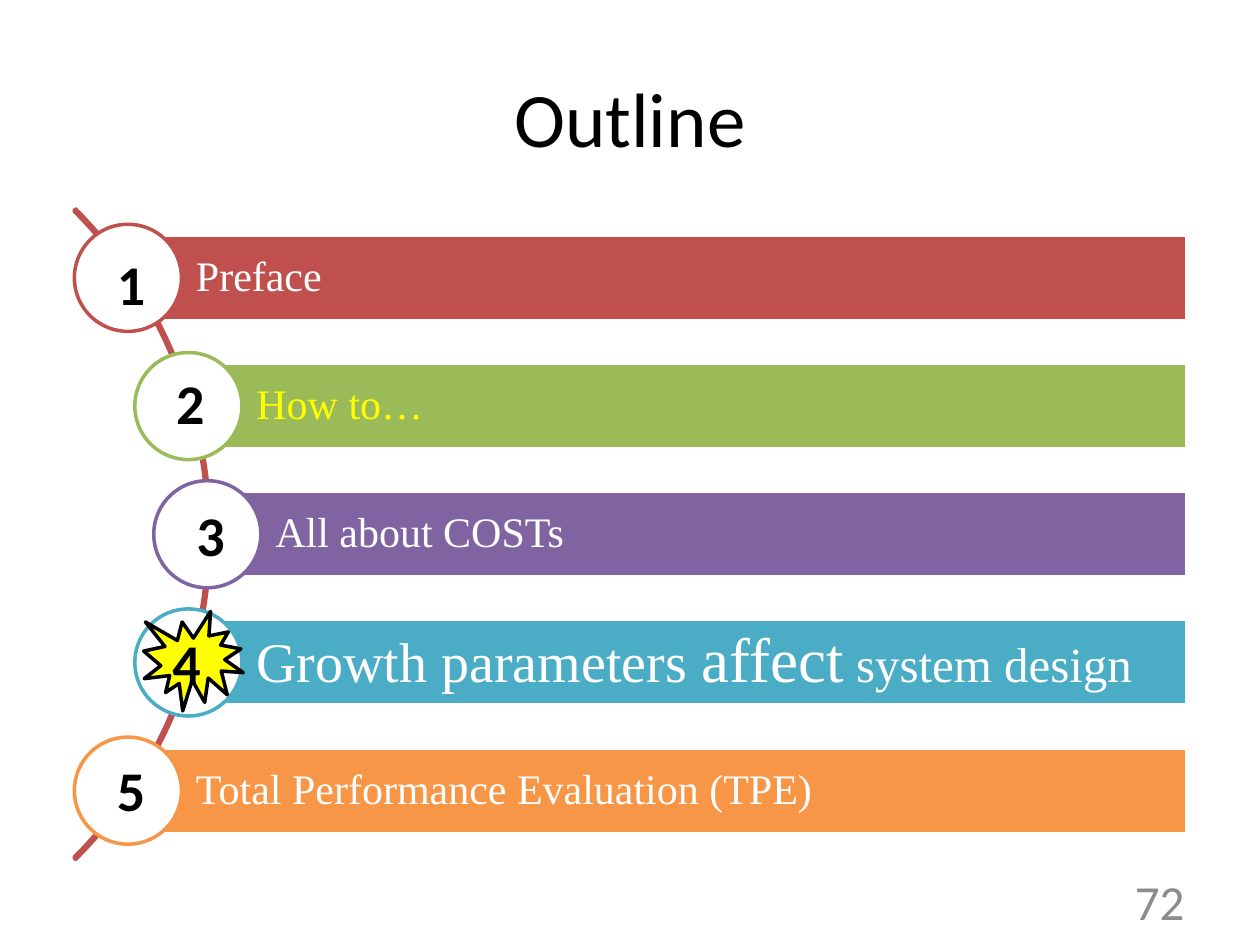
import pptx
import pptx.util
import pptx.dml.color
import pptx.enum.shapes
import pptx.enum.text

Inches = pptx.util.Inches
Pt = pptx.util.Pt
RGBColor = pptx.dml.color.RGBColor
Shape = pptx.enum.shapes.MSO_SHAPE
Align = pptx.enum.text.PP_ALIGN
Anchor = pptx.enum.text.MSO_ANCHOR
Fit = pptx.enum.text.MSO_AUTO_SIZE

WHITE = RGBColor(0xFF, 0xFF, 0xFF)
BLACK = RGBColor(0, 0, 0)
GRAY = RGBColor(0x8C, 0x8C, 0x8C)
YELLOW = RGBColor(0xFF, 0xFF, 0)
RED = RGBColor(0xC0, 0x50, 0x4D)
GREEN = RGBColor(0x9B, 0xBB, 0x59)
PURPLE = RGBColor(0x80, 0x64, 0xA2)
TEAL = RGBColor(0x4B, 0xAC, 0xC6)
ORANGE = RGBColor(0xF7, 0x96, 0x46)

SERIF = "Times New Roman"
SANS = "Calibri"
DISC = 0.85
BAR = 0.68

ROWS = [
    (0, RED, WHITE, [("Preface", 24)], 0.07, (0.24, 0.15)),
    (0.48, GREEN, YELLOW, [("How to…", 24)], 0.07, (0.23, 0.08)),
    (0.63, PURPLE, WHITE, [("All about COSTs", 24)], 0.07, (0.24, 0.11)),
    (0.48, TEAL, WHITE,
     [("Growth parameters ", 32), ("affect", 36), (" system design", 28)],
     0.09, (0.2, 0.11)),
    (0, ORANGE, WHITE, [("Total Performance Evaluation (TPE)", 24)],
     0.07, (0.24, 0.1)),
]
STAR = 3


def apply(item, style):
    for name, value in style.items():
        setattr(item, name, value)


def scale(box):
    return [Inches(value) for value in box]


def write(shape, runs, font, color, para, frame, bold=False):
    text = shape.text_frame
    apply(text, {"word_wrap": True, **frame})
    line = text.paragraphs[0]
    apply(line, para)
    for words, size in runs:
        run = line.add_run()
        run.text = words
        apply(run.font, {"name": font, "size": Pt(size), "bold": bold})
        run.font.color.rgb = color


def label(slide, box, words, size, color, para, frame, bold=False):
    shape = slide.shapes.add_textbox(*scale(box))
    write(shape, [(words, size)], SANS, color, para, frame, bold)


def draw(slide, kind, box, fill, edge):
    shape = slide.shapes.add_shape(kind, *scale(box))
    shape.shadow.inherit = False
    if fill is None:
        shape.fill.background()
    else:
        shape.fill.solid()
        shape.fill.fore_color.rgb = fill
    shape.line.color.rgb = edge
    shape.line.width = Pt(2)
    return shape


def add_title(slide, box):
    label(slide, box, "Outline", 44, BLACK,
          {"alignment": Align.CENTER}, {"vertical_anchor": Anchor.MIDDLE})


def add_page(slide, box):
    label(slide, box, "72", 28, GRAY,
          {"alignment": Align.RIGHT}, {"vertical_anchor": Anchor.MIDDLE})


def add_arc(slide, box):
    arc = draw(slide, Shape.BLOCK_ARC, box, None, RED)
    for spot, value in enumerate((189, 27, 0.003)):
        arc.adjustments[spot] = value


def add_row(slide, box, rank, row):
    left, top, width, height = box
    shift, color, ink, runs, pad, (right, down) = row
    left += shift
    start = left + DISC / 2
    edge = box[0] + width
    bar = draw(slide, Shape.RECTANGLE,
               (start, top + (height - BAR) / 2, edge - start, BAR),
               color, WHITE)
    frame = {"vertical_anchor": Anchor.MIDDLE, "margin_left": Inches(0.54)}
    for side in ("right", "top", "bottom"):
        frame["margin_" + side] = Inches(pad)
    write(bar, runs, SERIF, ink,
          {"alignment": Align.LEFT, "line_spacing": 0.9}, frame)
    draw(slide, Shape.OVAL, (left, top, DISC, DISC), WHITE, color)
    if rank == STAR:
        draw(slide, Shape.EXPLOSION1, (left + 0.07, top + 0.02, 0.79, 0.79),
             YELLOW, BLACK)
    label(slide, (left + right, top + down, 0.79, 0.64), str(rank + 1), 32,
          BLACK, {"alignment": Align.LEFT},
          {"auto_size": Fit.SHAPE_TO_FIT_TEXT}, True)


def add_list(slide, box):
    left, top, width, height = box
    add_arc(slide, (left - 6.22, top - 1.19, 7.3, 7.3))
    step = (height - DISC) / (len(ROWS) - 1)
    for rank, row in enumerate(ROWS):
        add_row(slide, (left, top + rank * step, width, DISC), rank, row)


def main():
    deck = pptx.Presentation()
    apply(deck, {"slide_width": Inches(10), "slide_height": Inches(7.5)})
    slide = deck.slides.add_slide(deck.slide_layouts[6])
    add_title(slide, (0.5, 0.3, 9, 1.25))
    add_page(slide, (7.17, 6.95, 2.33, 0.4))
    add_list(slide, (0.59, 1.78, 8.83, 4.92))
    deck.save("out.pptx")


if __name__ == "__main__":
    main()
